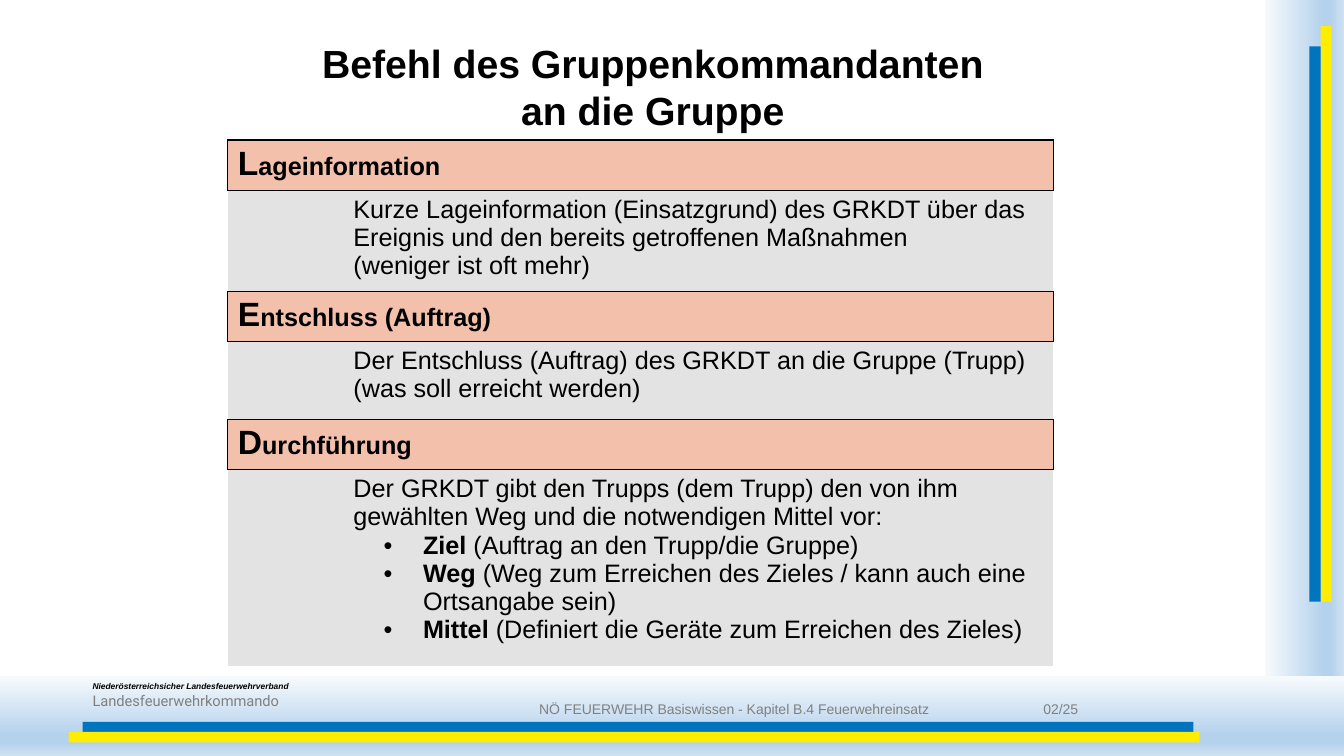
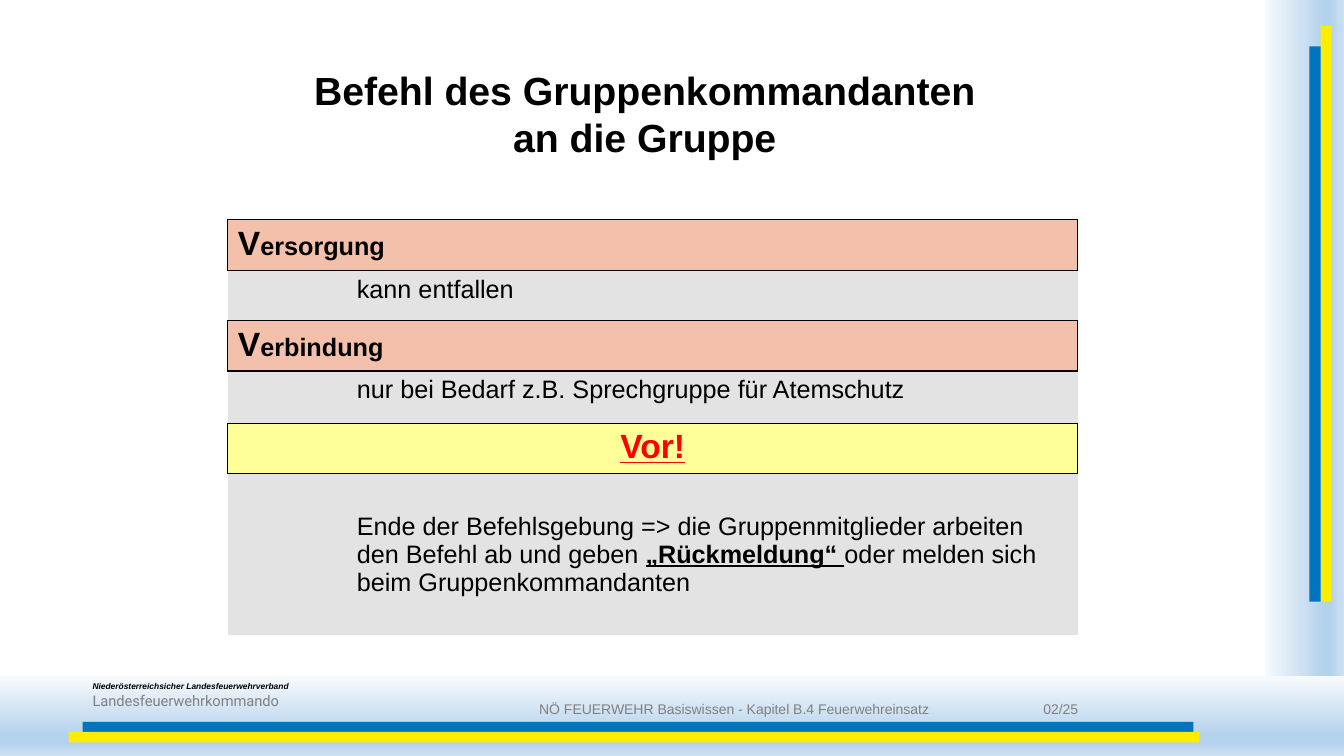
from lxml.etree import SubElement
from pptx import Presentation
from pptx.dml.color import RGBColor
from pptx.enum.shapes import MSO_SHAPE
from pptx.enum.text import MSO_ANCHOR as ANCHOR, PP_ALIGN as ALIGN
from pptx.oxml.ns import qn
from pptx.util import Inches, Pt

BLACK, GREY, RED = "000000", "808080", "FF0000"
BLUE, YELLOW = "0075BE", "FFED00"
SALMON, SILVER, CREAM = "F3C0AB", "E3E3E3", "FFFF99"
SKY = [(0, "F7FAFD"), (74, "B5D2EC"), (83, "B5D2EC"), (100, "CEE1F2")]
LABEL_SHARE = 0.14
HEAD_HEIGHT = 6.67


def rgb(value):
    """Turn a hex string into a colour."""
    return RGBColor.from_string(value)


class Deck:
    """Holds the style and the current slide; lengths are percent of the slide."""

    def __init__(self):
        """Open an empty wide presentation."""
        self.prs = Presentation()
        self.prs.slide_width, self.prs.slide_height = Inches(13.33), Inches(7.5)
        self.layout = self.prs.slide_layouts[5]
        self.s = None

    def x(self, share):
        """Convert a share of the slide width."""
        return round(self.prs.slide_width * share / 100)

    def y(self, share):
        """Convert a share of the slide height."""
        return round(self.prs.slide_height * share / 100)

    def area(self, left, top, width, height):
        """Convert a rectangle given in shares."""
        return self.x(left), self.y(top), self.x(width), self.y(height)

    def style(self, r, size=18, color=BLACK, name="Arial", bold=False,
              italic=False, underline=False):
        """Format one run."""
        f = r.font
        f.size, f.name, f.bold, f.italic = Pt(size), name, bold, italic
        f.underline = underline
        f.color.rgb = rgb(color)

    def fill_text(self, tf, paragraphs):
        """Fill a text frame; a part is a text, a break or a text with its style."""
        for i, parts in enumerate(paragraphs):
            p = tf.paragraphs[0] if i == 0 else tf.add_paragraph()
            for part in parts:
                if part == "\n":
                    p.add_line_break()
                    continue
                text, look = (part, {}) if isinstance(part, str) else part
                r = p.add_run()
                r.text = text
                self.style(r, **look)

    def bullet(self, p):
        """Give a paragraph a hanging bullet."""
        pPr = p._p.get_or_add_pPr()
        pPr.set("marL", str(Inches(0.69)))
        pPr.set("indent", str(Inches(-0.39)))
        SubElement(pPr, qn("a:buFont")).set("typeface", "Arial")
        SubElement(pPr, qn("a:buChar")).set("char", "•")

    def bar(self, box, color=None, angle=0):
        """Draw a plain bar, or a sky gradient when no colour is given."""
        sp = self.s.shapes.add_shape(MSO_SHAPE.RECTANGLE, *self.area(*box))
        sp.shadow.inherit = False
        sp.line.fill.background()
        if color:
            sp.fill.solid()
            sp.fill.fore_color.rgb = rgb(color)
            return
        sp.fill.gradient()
        sp.fill.gradient_angle = angle
        stops = sp._element.spPr.find(".//" + qn("a:gsLst"))
        for stop in list(stops):
            stops.remove(stop)
        for position, value in SKY:
            gs = SubElement(stops, qn("a:gs"), pos=str(position * 1000))
            SubElement(gs, qn("a:srgbClr"), val=value)

    def text(self, box, paragraphs):
        """Add a wrapping text box."""
        tf = self.s.shapes.add_textbox(*self.area(*box)).text_frame
        tf.word_wrap = True
        self.fill_text(tf, paragraphs)
        return tf

    def frame(self):
        """Draw the bands and the sender, then move them to the layout."""
        self.bar((94.09, 0, 5.91, 100))
        self.bar((0, 89.47, 100, 10.53), angle=270)
        self.bar((98.25, 3.47, 0.83, 76.13), YELLOW)
        self.bar((97.43, 6.13, 0.83, 73.47), BLUE)
        self.bar((6.15, 95.47, 82.65, 1.33), BLUE)
        self.bar((5.1, 96.8, 84.15, 1.4), YELLOW)
        self.text((6.15, 89.47, 21.75, 5.07), [
            [("Niederösterreichsicher Landesfeuerwehrverband",
              dict(size=6, bold=True, italic=True))],
            [("Landesfeuerwehrkommando",
              dict(size=10.5, color=GREY, name="Roboto"))]])
        for sp in list(self.s.shapes):
            if not sp.is_placeholder:
                sp._element.nvSpPr.cNvPr.id = sp.shape_id + 20
                self.layout.shapes.element.append(sp._element)

    def slide(self, title, left, top):
        """Start a slide with its title and footer."""
        first = self.s is None
        self.s = self.prs.slides.add_slide(self.layout)
        if first:
            self.frame()
        sp = self.s.shapes.title
        sp.left, sp.top, sp.width, sp.height = self.area(left, top, 53.78, 13.87)
        tf = sp.text_frame
        tf.text = title
        tf.word_wrap, tf.vertical_anchor = True, ANCHOR.MIDDLE
        tf.paragraphs[0].alignment = ALIGN.CENTER
        self.style(tf.paragraphs[0].runs[0], size=28, bold=True)
        self.footer("NÖ FEUERWEHR Basiswissen - Kapitel B.4 Feuerwehreinsatz\t02/25")

    def footer(self, line):
        """Add the footer with a tab stop before the page count."""
        tf = self.text((39.38, 92, 41.93, 3.6), [[(line, dict(size=10, color=GREY))]])
        tabs = SubElement(tf.paragraphs[0]._p.get_or_add_pPr(), qn("a:tabLst"))
        SubElement(tabs, qn("a:tab"), pos=str(Inches(5)), algn="l")

    def row(self, box, shares, fill, sides):
        """Add a one-row table with borders on the given sides."""
        left, top, width, height = self.area(*box)
        table = self.s.shapes.add_table(1, len(shares), left, top, width, height).table
        table.first_row = table.horz_banding = False
        table.rows[0].height = height
        for column, share in zip(table.columns, shares):
            column.width = round(width * share)
        for cell in table.iter_cells():
            cell.fill.solid()
            cell.fill.fore_color.rgb = rgb(fill)
            self.borders(cell, sides)
        return table.cell(0, len(shares) - 1)

    def borders(self, cell, sides):
        """Draw black lines on the given sides and none on the others."""
        tcPr = cell._tc.get_or_add_tcPr()
        for i, side in enumerate("LRTB"):
            ln = SubElement(tcPr, qn("a:ln" + side), w=str(Pt(1)))
            tcPr.insert(i, ln)
            if side in sides:
                SubElement(SubElement(ln, qn("a:solidFill")), qn("a:srgbClr"), val=BLACK)
            else:
                SubElement(ln, qn("a:noFill"))

    def heading(self, box, word):
        """Add a heading row with a large initial, or a centred call to act."""
        call = word.endswith("!")
        cell = self.row(box, [1], CREAM if call else SALMON, "LRTB")
        if call:
            parts = [(word, dict(size=24, color=RED, bold=True, underline=True))]
        else:
            parts = [(word[0], dict(size=24, bold=True)), (word[1:], dict(bold=True))]
        self.fill_text(cell.text_frame, [parts])
        if call:
            cell.text_frame.paragraphs[0].alignment = ALIGN.CENTER

    def body(self, box, paragraphs, bullets_from, anchor):
        """Add an indented text row below a heading."""
        cell = self.row(box, [LABEL_SHARE, 1 - LABEL_SHARE], SILVER, "T")
        cell.vertical_anchor = anchor
        self.fill_text(cell.text_frame, paragraphs)
        for p in cell.text_frame.paragraphs[bullets_from:]:
            self.bullet(p)

    def sections(self, top, width, items):
        """Stack headings and their text rows from the top down."""
        for word, height, paragraphs, bullets_from, anchor in items:
            self.heading((16.95, top, width, HEAD_HEIGHT), word)
            top += HEAD_HEIGHT
            self.body((16.95, top, width, height), paragraphs, bullets_from, anchor)
            top += height


def main():
    """Build both slides and save them."""
    deck = Deck()
    title = "Befehl des Gruppenkommandanten an die Gruppe"
    bold = dict(bold=True)

    deck.slide(title, 21.68, 4.53)
    deck.sections(18.53, 61.43, [
        ("Lageinformation", 13.33, [
            ["Kurze Lageinformation (Einsatzgrund) des GRKDT über das Ereignis "
             "und den bereits getroffenen Maßnahmen"],
            ["(weniger ist oft mehr)"]], 2, ANCHOR.TOP),
        ("Entschluss (Auftrag)", 10.27, [
            ["Der Entschluss (Auftrag) des GRKDT an die Gruppe (Trupp) ", "\n",
             "(was soll erreicht werden)"]], 1, ANCHOR.TOP),
        ("Durchführung", 26, [
            ["Der GRKDT gibt den Trupps (dem Trupp) den von ihm gewählten Weg "
             "und die notwendigen Mittel vor:"],
            [("Ziel", bold), " (Auftrag an den Trupp/die Gruppe)"],
            [("Weg", bold),
             " (Weg zum Erreichen des Zieles / kann auch eine Ortsangabe sein)"],
            [("Mittel ", bold), "(Definiert die Geräte zum Erreichen des Zieles)"],
        ], 1, ANCHOR.TOP)])

    deck.slide(title, 21.08, 8)
    deck.sections(29.07, 63.23, [
        ("Versorgung", 6.67, [["kann entfallen"]], 1, ANCHOR.TOP),
        ("Verbindung", 6.93,
         [["nur bei Bedarf z.B. Sprechgruppe für Atemschutz"]], 1, ANCHOR.TOP),
        ("Vor!", 21.33, [
            ["Ende der Befehlsgebung => die Gruppenmitglieder arbeiten den Befehl "
             "ab und geben ",
             ("„Rückmeldung“ ", dict(bold=True, underline=True)),
             "oder melden sich beim Gruppenkommandanten"]], 1, ANCHOR.MIDDLE)])

    deck.prs.save("out.pptx")


if __name__ == "__main__":
    main()
